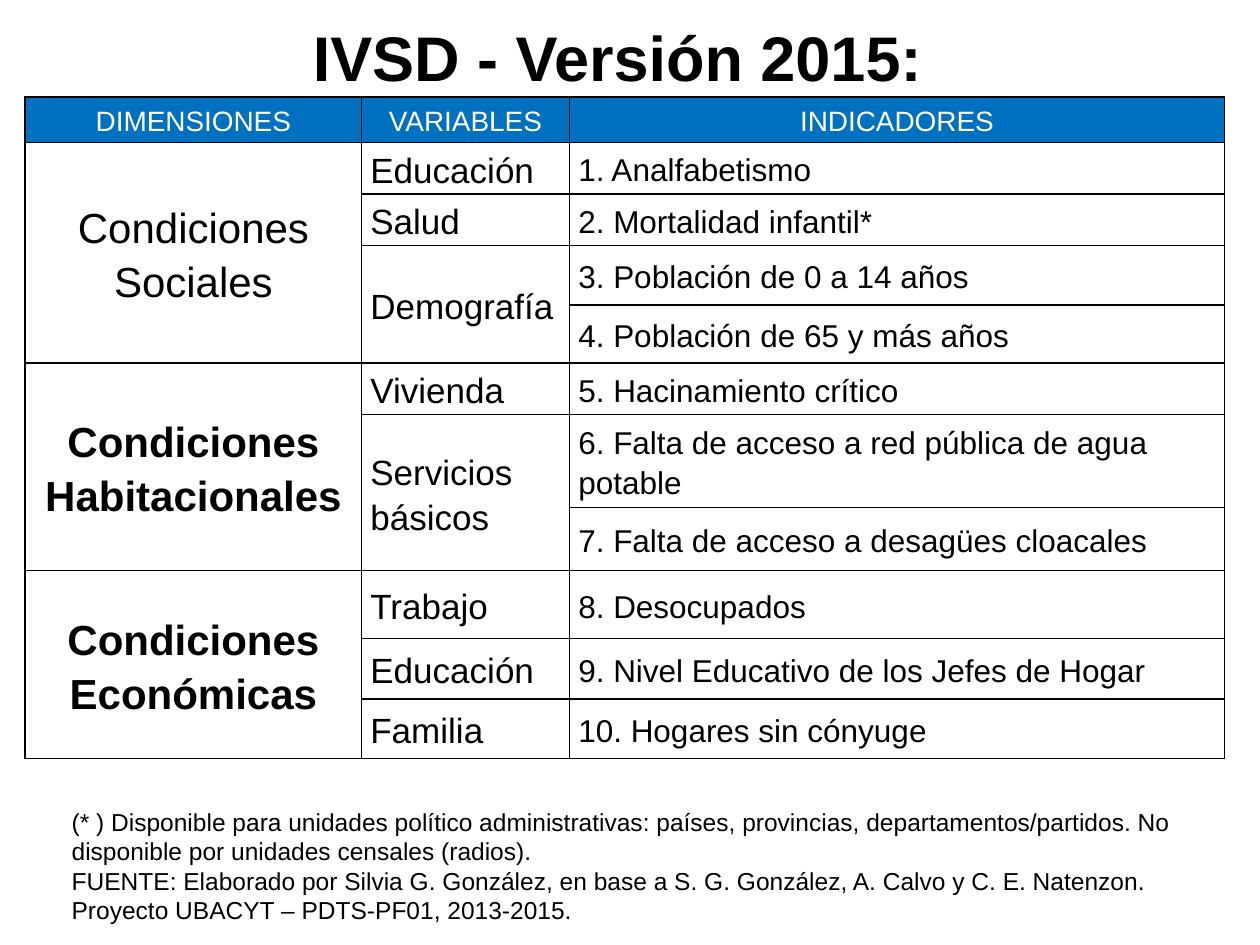
from lxml.etree import SubElement
from pptx import Presentation
from pptx.dml.color import RGBColor
from pptx.enum.text import MSO_ANCHOR, PP_ALIGN
from pptx.oxml.ns import qn
from pptx.util import Inches, Pt

BLACK = RGBColor(0, 0, 0)
WHITE = RGBColor(255, 255, 255)
BLUE = RGBColor(0x00, 0x70, 0xC0)
FONT = "Arial"

# Content
TITLE = "IVSD - Versión 2015: "
HEADERS = ["DIMENSIONES", "VARIABLES", "INDICADORES"]
# (dimension, bold, [(variable, [indicators])])
DIMENSIONS = [
    ("Condiciones\nSociales", False, [
        ("Educación", ["1. Analfabetismo"]),
        ("Salud", ["2. Mortalidad infantil*"]),
        ("Demografía", ["3. Población de 0 a 14 años",
                        "4. Población de 65 y más años"]),
    ]),
    ("Condiciones\nHabitacionales", True, [
        ("Vivienda", ["5. Hacinamiento crítico"]),
        ("Servicios básicos", ["6. Falta de acceso a red pública de agua potable",
                               "7. Falta de acceso a desagües cloacales"]),
    ]),
    ("Condiciones\nEconómicas", True, [
        ("Trabajo", ["8. Desocupados"]),
        ("Educación", ["9. Nivel Educativo de los Jefes de Hogar"]),
        ("Familia", ["10. Hogares sin cónyuge"]),
    ]),
]
NOTES = (
    "(* ) Disponible para unidades político administrativas: países, provincias, "
    "departamentos/partidos. No disponible por unidades censales (radios).\n"
    "FUENTE: Elaborado por Silvia G. González, en base a S. G. González, A. Calvo y "
    "C. E. Natenzon. Proyecto UBACYT – PDTS-PF01, 2013-2015."
)
COLUMN_WIDTHS = [2.67, 1.65, 5.2]
ROW_HEIGHTS = [0.36, 0.41, 0.41, 0.47, 0.46, 0.41, 0.74, 0.5, 0.54, 0.48, 0.47]


def write(frame, text, size, color=BLACK, bold=False, align=PP_ALIGN.LEFT, spacing=None):
    frame.text = text
    frame.word_wrap = True
    for paragraph in frame.paragraphs:
        paragraph.alignment = align
        paragraph.line_spacing = spacing
        for run in paragraph.runs:
            font = run.font
            font.name, font.size, font.bold = FONT, Pt(size), bold
            font.color.rgb = color


def add_text(slide, box, text, size, **style):
    frame = slide.shapes.add_textbox(*map(Inches, box)).text_frame
    write(frame, text, size, **style)
    frame.vertical_anchor = MSO_ANCHOR.MIDDLE


def style_cell(cell):
    cell.vertical_anchor = MSO_ANCHOR.MIDDLE
    cell.margin_left = cell.margin_right = Inches(0.07)
    cell.margin_top = cell.margin_bottom = 0
    properties = cell._tc.get_or_add_tcPr()
    for side in ("lnL", "lnR", "lnT", "lnB"):
        line = SubElement(properties, qn(f"a:{side}"), w=str(Pt(1)))
        fill = SubElement(line, qn("a:solidFill"))
        SubElement(fill, qn("a:srgbClr"), val=str(BLACK))
    cell.fill.background()


def fill_cell(cell, color):
    cell.fill.solid()
    cell.fill.fore_color.rgb = color


def merge_down(table, row, column, count):
    cell = table.cell(row, column)
    if count > 1:
        cell.merge(table.cell(row + count - 1, column))
    return cell


prs = Presentation()
prs.slide_width, prs.slide_height = Inches(10), Inches(7.5)
slide = prs.slides.add_slide(prs.slide_layouts[6])

add_text(slide, (0.47, 0.14, 9, 0.61), TITLE, 36, bold=True, align=PP_ALIGN.CENTER)

# Table grid
table = slide.shapes.add_table(
    len(ROW_HEIGHTS), len(COLUMN_WIDTHS), Inches(0.2), Inches(0.77),
    Inches(sum(COLUMN_WIDTHS)), Inches(sum(ROW_HEIGHTS))).table
for column, width in zip(table.columns, COLUMN_WIDTHS):
    column.width = Inches(width)
for row, height in zip(table.rows, ROW_HEIGHTS):
    row.height = Inches(height)
for cell in table.iter_cells():
    style_cell(cell)

# Header row
for column, header in enumerate(HEADERS):
    cell = table.cell(0, column)
    fill_cell(cell, BLUE)
    write(cell.text_frame, header, 16, WHITE, align=PP_ALIGN.CENTER, spacing=1.15)

# Dimensions span their variables, variables span their indicators
row = 1
for dimension, bold, variables in DIMENSIONS:
    count = sum(len(indicators) for _, indicators in variables)
    cell = merge_down(table, row, 0, count)
    fill_cell(cell, WHITE)
    write(cell.text_frame, dimension, 24, bold=bold, align=PP_ALIGN.CENTER, spacing=1.15)
    for variable, indicators in variables:
        cell = merge_down(table, row, 1, len(indicators))
        write(cell.text_frame, variable, 20, spacing=1.15)
        for indicator in indicators:
            write(table.cell(row, 2).text_frame, indicator, 18, spacing=1.15)
            row += 1

# Footnote and source
add_text(slide, (0.47, 6.35, 9.25, 1.04), NOTES, 14)

prs.save("out.pptx")
